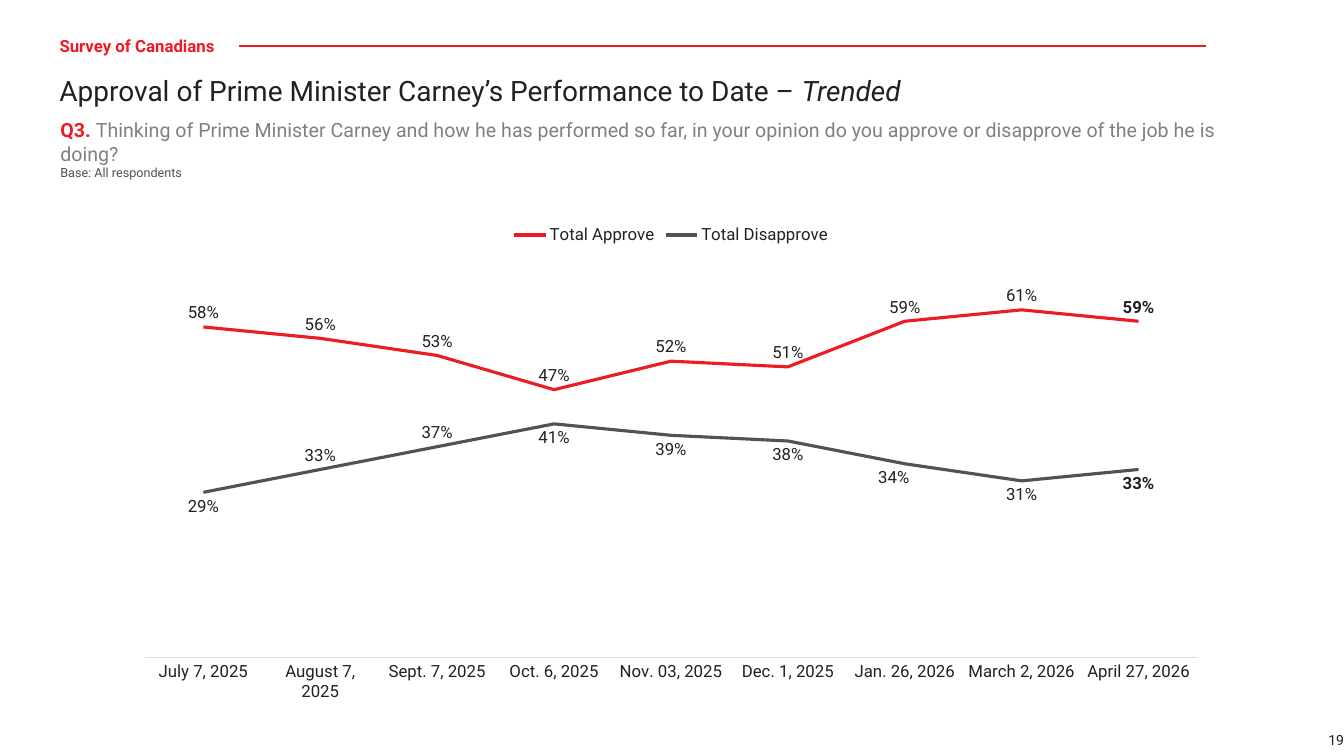
import pptx
import pptx.chart.data
import pptx.dml.color
import pptx.enum.chart
import pptx.enum.shapes
import pptx.enum.text
import pptx.oxml
import pptx.util
from lxml import etree

WIDTH, HEIGHT = 13.33, 7.5
FONT = "Roboto"
COLORS = {
    "red": "ED1C24",
    "ink": "212121",
    "slate": "515156",
    "gray": "808080",
    "axis": "DEDEDE",
    "paper": "FFFFFF",
}
DATES = [
    "July 7, 2025", "August 7, 2025", "Sept. 7, 2025",
    "Oct. 6, 2025", "Nov. 03, 2025", "Dec. 1, 2025",
    "Jan. 26, 2026", "March 2, 2026", "April 27, 2026",
]
# name, color, values, points labelled below the line
TRENDS = [
    ("Total Approve", "red",
     [0.58, 0.56, 0.53, 0.47, 0.52, 0.51, 0.59, 0.61, 0.59], []),
    ("Total Disapprove", "slate",
     [0.29, 0.33, 0.37, 0.41, 0.39, 0.38, 0.34, 0.31, 0.33],
     [0, 3, 4, 5, 6, 7, 8]),
]
LATEST = len(DATES) - 1
JANUARY = 6

# Left, top, width, height in inches
MARGIN = 0.49
RULE_END = 11.96
HEADER = (MARGIN, 0.33, 1.88, 0.28)
HEADLINE = (MARGIN, 0.72, RULE_END - MARGIN, 0.39)
QUESTION = (0.5, 1.12, 12.25, 0.72)
CHART = (1.22, 2.12, 10.87, 4.95)
PAGE_NUMBER = (WIDTH - 1.24, 7.18, 1.24, 0.32)


def inches(box):
    return [pptx.util.Inches(length) for length in box]


def rgb(name):
    return pptx.dml.color.RGBColor.from_string(COLORS[name])


def style(font, size=None, color=None, bold=None, italic=None):
    if size:
        font.name = FONT
        font.size = pptx.util.Pt(size)
    if color:
        font.color.rgb = rgb(color)
    if bold is not None:
        font.bold = bold
    if italic is not None:
        font.italic = italic


def fill_paragraph(paragraph, runs, size, color, **look):
    """Write (text, run formatting) pairs into one paragraph."""
    style(paragraph.font, size, color, **look)
    for text, changes in runs:
        run = paragraph.add_run()
        run.text = text
        style(run.font, **changes)


def add_text(slide, box):
    frame = slide.shapes.add_textbox(*inches(box)).text_frame
    frame.word_wrap = True
    return frame


def add_rule(slide):
    rule = slide.shapes.add_connector(
        pptx.enum.shapes.MSO_CONNECTOR.STRAIGHT,
        *inches((0.9, 0.46, RULE_END, 0.46)))
    rule.line.color.rgb = rgb("red")
    rule.line.width = pptx.util.Pt(1.5)
    etree.SubElement(rule.element.spPr, pptx.oxml.ns.qn("a:effectLst"))
    # Behind the header, whose white fill hides the start of the rule
    slide.shapes.element.insert(2, rule.element)


def add_header(slide):
    header = slide.shapes.title
    header.left, header.top, header.width, header.height = inches(HEADER)
    header.fill.solid()
    header.fill.fore_color.rgb = rgb("paper")
    frame = header.text_frame
    frame.word_wrap = True
    frame.auto_size = pptx.enum.text.MSO_AUTO_SIZE.SHAPE_TO_FIT_TEXT
    frame.vertical_anchor = pptx.enum.text.MSO_ANCHOR.TOP
    line = frame.paragraphs[0]
    line.alignment = pptx.enum.text.PP_ALIGN.LEFT
    line.line_spacing = 0.9
    fill_paragraph(line, [("Survey of Canadians", {})], 12, "red", bold=True)


def set_layout(parent, position, **shares):
    """Insert a manual chart layout, in shares of the chart's size."""
    layout = etree.Element(pptx.oxml.ns.qn("c:layout"))
    manual = etree.SubElement(layout, pptx.oxml.ns.qn("c:manualLayout"))
    for tag, value in shares.items():
        etree.SubElement(manual, pptx.oxml.ns.qn(f"c:{tag}")).set("val", str(value))
    parent.insert(position, layout)


def format_trend(trend, color, below):
    trend.smooth = False
    trend.format.line.color.rgb = rgb(color)
    trend.format.line.width = pptx.util.Pt(2.25)
    trend.marker.style = pptx.enum.chart.XL_MARKER_STYLE.NONE
    places = pptx.enum.chart.XL_LABEL_POSITION
    labels = trend.data_labels
    labels.show_value = True
    labels.number_format = "0%"
    labels.number_format_is_linked = False
    labels.position = places.ABOVE
    style(labels.font, 12, "ink")
    for index in sorted({*below, LATEST}):
        label = trend.points[index].data_label
        style(label.font, 12, "ink", bold=index == LATEST)
        label.position = places.BELOW if index in below else places.ABOVE
    if JANUARY in below:
        january = labels._element.xpath(f"c:dLbl[c:idx/@val='{JANUARY}']")[0]
        set_layout(january, 1, x=-0.01, y=0)


def add_trend_chart(slide):
    data = pptx.chart.data.CategoryChartData(number_format="0%")
    data.categories = DATES
    for name, _, values, _ in TRENDS:
        data.add_series(name, values)
    chart = slide.shapes.add_chart(
        pptx.enum.chart.XL_CHART_TYPE.LINE, *inches(CHART), data).chart
    style(chart.font, 12, "ink")
    chart.has_title = False
    chart.has_legend = True
    chart.legend.position = pptx.enum.chart.XL_LEGEND_POSITION.TOP
    chart.legend.include_in_layout = False
    style(chart.legend.font, 12, "ink")

    # Axes
    values_axis = chart.value_axis
    values_axis.minimum_scale, values_axis.maximum_scale = 0, 0.7
    values_axis.has_major_gridlines = False
    values_axis.visible = False
    dates_axis = chart.category_axis
    dates_axis.major_tick_mark = pptx.enum.chart.XL_TICK_MARK.NONE
    dates_axis.format.line.color.rgb = rgb("axis")
    dates_axis.format.line.width = pptx.util.Pt(0.75)
    style(dates_axis.tick_labels.font, 12, "ink")

    # Plot area
    plot_area = chart.element.chart.plotArea
    for automatic in plot_area.findall(pptx.oxml.ns.qn("c:layout")):
        plot_area.remove(automatic)
    set_layout(plot_area, 0, layoutTarget="inner", xMode="edge", yMode="edge",
               x=0.02, y=0.09, w=0.96, h=0.8)
    chart.plots[0].vary_by_categories = False
    for trend, (_, color, _, below) in zip(chart.plots[0].series, TRENDS):
        format_trend(trend, color, below)


def main():
    deck = pptx.Presentation()
    deck.slide_width, deck.slide_height = inches((WIDTH, HEIGHT))
    slide = deck.slides.add_slide(deck.slide_layouts.get_by_name("Title Only"))

    # Header
    add_header(slide)
    add_rule(slide)

    # Headline
    headline = add_text(slide, HEADLINE).paragraphs[0]
    headline.line_spacing = 0.9
    fill_paragraph(headline, [
        ("Approval of Prime Minister Carney’s Performance to Date – ", {}),
        ("Trended", {"italic": True}),
    ], 20, "ink")

    add_trend_chart(slide)

    # Survey question and base
    question = add_text(slide, QUESTION)
    question.auto_size = pptx.enum.text.MSO_AUTO_SIZE.SHAPE_TO_FIT_TEXT
    fill_paragraph(question.paragraphs[0], [
        ("Q3. ", {"color": "red", "bold": True}),
        ("Thinking of Prime Minister Carney and how he has performed so far, in your "
         "opinion do you approve or disapprove of the job he is doing?", {}),
    ], 14, "gray")
    fill_paragraph(question.add_paragraph(), [("Base: All respondents", {})], 9, "slate")

    # Page number
    page = add_text(slide, PAGE_NUMBER)
    page.vertical_anchor = pptx.enum.text.MSO_ANCHOR.MIDDLE
    page.margin_right = 0
    page.paragraphs[0].alignment = pptx.enum.text.PP_ALIGN.RIGHT
    fill_paragraph(page.paragraphs[0], [("19", {})], 10, "ink")

    deck.save("out.pptx")


if __name__ == "__main__":
    main()
